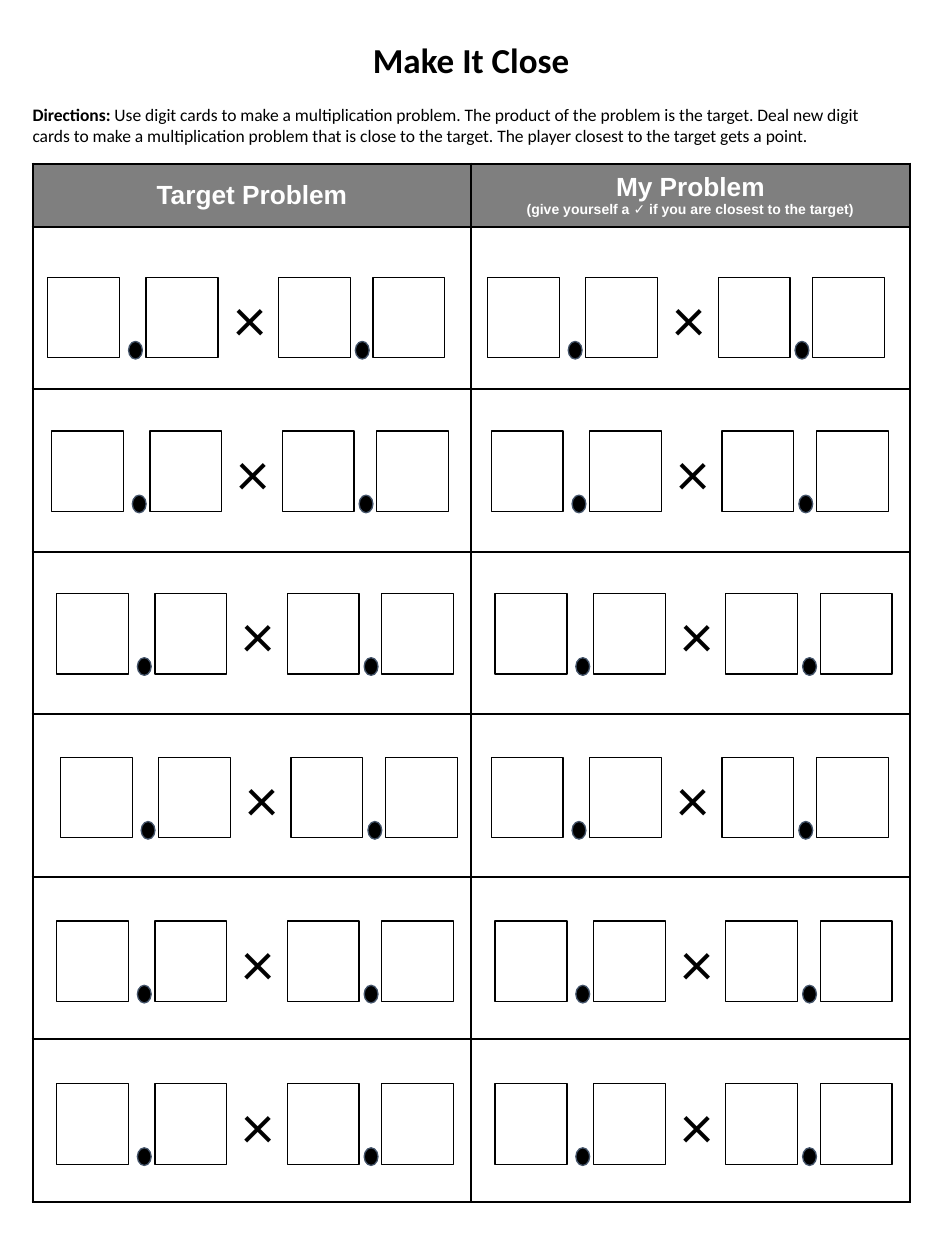
import pptx
import pptx.util
import pptx.dml.color
import pptx.enum.shapes
import pptx.enum.text
import pptx.oxml
import pptx.oxml.ns
from pptx.util import Inches

COLORS = {"black": "000000", "white": "FFFFFF", "gray": "7F7F7F", "slate": "44546A"}
SHAPE = pptx.enum.shapes.MSO_SHAPE
ALIGN = pptx.enum.text.PP_ALIGN
MIDDLE = pptx.enum.text.MSO_ANCHOR.MIDDLE


def rgb(name):
    return pptx.dml.color.RGBColor.from_string(COLORS[name])


def write(p, text, size=10, font="Calibri", color="black", bold=False, align=ALIGN.LEFT):
    p.alignment = align
    r = p.add_run()
    r.text = text
    r.font.size = pptx.util.Pt(size)
    r.font.name = font
    r.font.bold = bold
    r.font.color.rgb = rgb(color)


prs = pptx.Presentation()
prs.slide_width = Inches(7.5)
prs.slide_height = Inches(10)
s = prs.slides.add_slide(prs.slide_layouts[6])

banners = [
    (0.16, 7.16, 20, ALIGN.CENTER, [("Make It Close", True)]),
    (0.68, 6.82, 10, ALIGN.LEFT, [
        ("Directions:", True),
        (" Use digit cards to make a multiplication problem. The product of the problem "
         "is the target. Deal new digit cards to make a multiplication problem that is "
         "close to the target. The player closest to the target gets a point.", False),
    ]),
]
for top, width, size, align, runs in banners:
    sp = s.shapes.add_shape(SHAPE.RECTANGLE, Inches(0.16), Inches(top), Inches(width), Inches(0.62))
    sp.shadow.inherit = False
    sp.fill.solid()
    sp.fill.fore_color.rgb = rgb("white")
    sp.line.color.rgb = rgb("white")
    sp.line.width = pptx.util.Pt(1)
    tf = sp.text_frame
    tf.word_wrap = True
    tf.vertical_anchor = MIDDLE
    for text, bold in runs:
        write(tf.paragraphs[0], text, size=size, bold=bold, align=align)

table = s.shapes.add_table(7, 2, Inches(0.26), Inches(1.3), Inches(6.96), Inches(8.24)).table
for col in table.columns:
    col.width = Inches(3.48)
for i, row in enumerate(table.rows):
    row.height = Inches(1.29 if i else 0.5)
    for cell in row.cells:
        tcPr = cell._tc.get_or_add_tcPr()
        for side in "LRTB":
            tcPr.append(pptx.oxml.parse_xml(
                f'<a:ln{side} {pptx.oxml.ns.nsdecls("a")} w="19050"><a:solidFill>'
                f'<a:srgbClr val="{COLORS["black"]}"/></a:solidFill></a:ln{side}>'))
        cell.fill.solid()
        cell.fill.fore_color.rgb = rgb("white" if i else "gray")

headers = [
    [("Target Problem", 15)],
    [("My Problem", 15), ("(give yourself a ✓ if you are closest to the target)", 8)],
]
for cell, lines in zip(table.rows[0].cells, headers):
    cell.vertical_anchor = MIDDLE
    cell.margin_left = cell.margin_right = Inches(0.06)
    cell.margin_top = cell.margin_bottom = 0
    tf = cell.text_frame
    for i, (text, size) in enumerate(lines):
        p = tf.add_paragraph() if i else tf.paragraphs[0]
        write(p, text, size=size, font="Arial", color="white", bold=True, align=ALIGN.CENTER)

row_tops = [2.2, 3.42, 4.71, 6.01, 7.31, 8.6]
column_lefts = [
    [0.38, 0.41, 0.45, 0.48, 0.45, 0.45],
    [3.87, 3.9, 3.93, 3.9, 3.93, 3.93],
]
digit_offsets = [0, 0.78, 1.83, 2.58]
point_offsets = [0.64, 2.44]

for lefts in column_lefts:
    for left, top in zip(lefts, row_tops):
        for dx in digit_offsets:
            sp = s.shapes.add_shape(SHAPE.RECTANGLE, Inches(left + dx), Inches(top),
                                    Inches(0.57), Inches(0.64))
            sp.shadow.inherit = False
            sp.fill.background()
            sp.line.color.rgb = rgb("black")
            sp.line.width = pptx.util.Pt(0.75)
        for dx in point_offsets:
            sp = s.shapes.add_shape(SHAPE.OVAL, Inches(left + dx), Inches(top + 0.51),
                                    Inches(0.11), Inches(0.14))
            sp.shadow.inherit = False
            sp.fill.solid()
            sp.fill.fore_color.rgb = rgb("black")
            sp.line.color.rgb = rgb("slate")
            sp.line.width = pptx.util.Pt(0.75)
        tf = s.shapes.add_textbox(Inches(left + 1.38), Inches(top - 0.08),
                                  Inches(0.45), Inches(0.81)).text_frame
        tf.word_wrap = True
        tf.auto_size = pptx.enum.text.MSO_AUTO_SIZE.SHAPE_TO_FIT_TEXT
        tf.margin_left = tf.margin_right = tf.margin_top = tf.margin_bottom = Inches(0.1)
        write(tf.paragraphs[0], "×", size=36)

prs.save("out.pptx")
